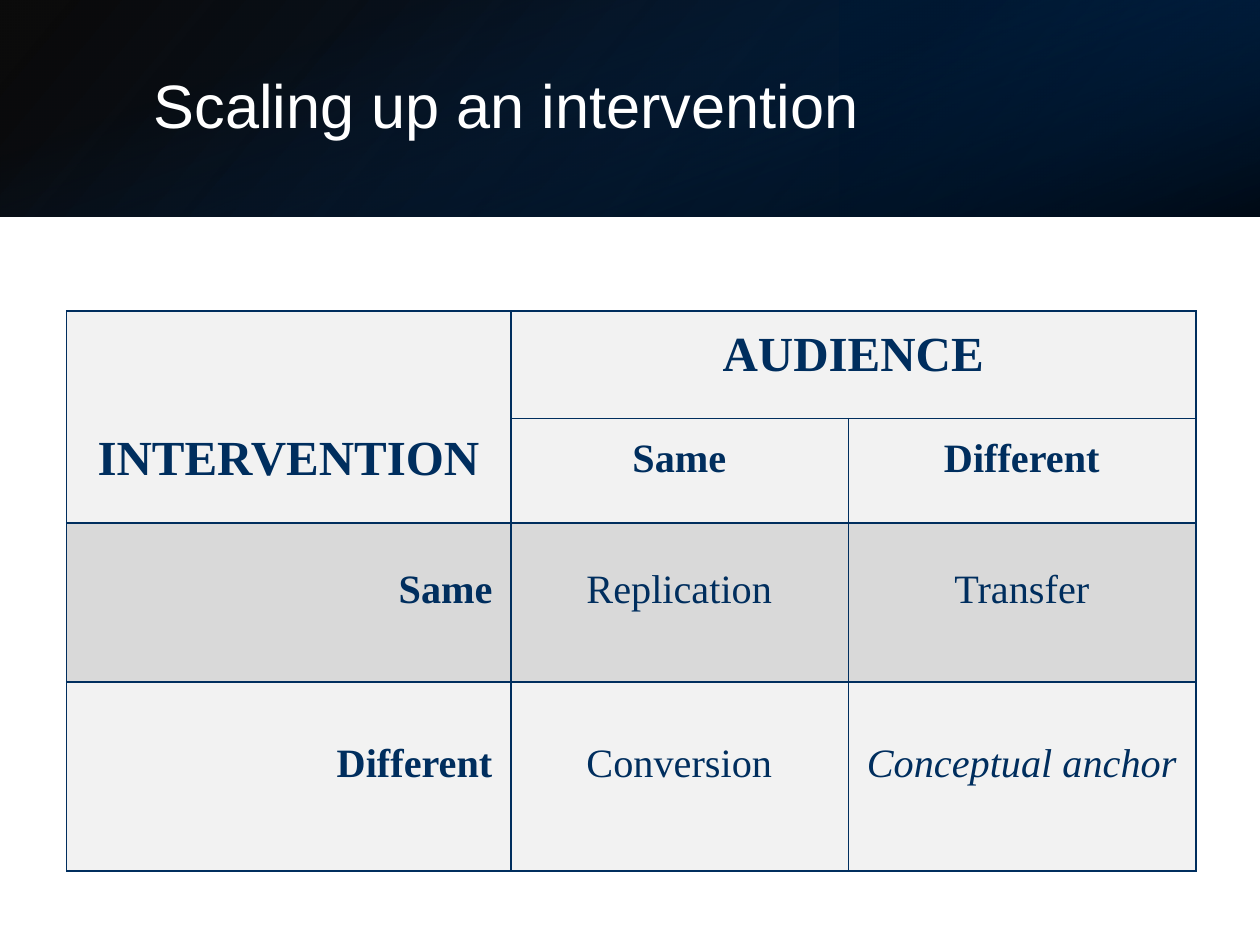
"""Build a slide with a gradient header and an audience by intervention table."""
import pptx
import pptx.dml.color
import pptx.enum.shapes
import pptx.enum.text
import pptx.oxml
import pptx.oxml.ns
import pptx.util
from lxml import etree

Pt = pptx.util.Pt
ALIGN = pptx.enum.text.PP_ALIGN
ANCHOR = pptx.enum.text.MSO_ANCHOR
COLORS = {
    "white": "FFFFFF", "black": "000000", "navy": "002E5E",
    "deep": "002246", "midnight": "00172F", "light": "F2F2F2", "gray": "D9D9D9",
}
TITLE = "Scaling up an intervention"
BAND_HEIGHT = 123.84
BANDS = [
    {"box": (0, 0, 720, BAND_HEIGHT), "rotation": 0, "flip": True, "angle": 140,
     "stops": [(0, "black", 96), (100, "deep", 100)]},
    {"box": (480, 0, 240, BAND_HEIGHT), "rotation": 180, "flip": True, "angle": 320,
     "stops": [(19, "midnight", 68), (100, "navy", 79)]},
    {"box": (360 - BAND_HEIGHT / 2, BAND_HEIGHT / 2 - 360, BAND_HEIGHT, 720),
     "rotation": 90, "flip": False, "angle": 340,
     "stops": [(23, "navy", 0), (99, "black", 74)]},
]
ROWS = [
    ["INTERVENTION", "AUDIENCE", ""],
    ["", "Same", "Different"],
    ["Same", "Replication", "Transfer"],
    ["Different", "Conversion", "Conceptual anchor"],
]
MERGES = [((0, 0), (1, 0)), ((0, 1), (0, 2))]
ROW_FILLS = ["light", "light", "gray", "light"]
TABLE_LEFT, TABLE_TOP = 38, 177.6
COLUMN_WIDTHS = [254, 193, 198.5]
ROW_HEIGHTS = [61.7, 52.6, 91, 108]


def rgb(name):
    return pptx.dml.color.RGBColor.from_string(COLORS[name])


def add_band(slide, depth, band):
    shape = slide.shapes.add_shape(
        pptx.enum.shapes.MSO_SHAPE.RECTANGLE, *(Pt(value) for value in band["box"]))
    shape.shadow.inherit = False
    shape.line.fill.background()
    shape.rotation = band["rotation"]
    if band["flip"]:
        shape.element.spPr.get_or_add_xfrm().set("flipH", "1")
    shape.fill.gradient()
    shape.fill.gradient_angle = 360 - band["angle"]
    stop_elements = shape.element.spPr.iter(pptx.oxml.ns.qn("a:gs"))
    for stop, element, (position, color, opacity) in zip(
            shape.fill.gradient_stops, stop_elements, band["stops"]):
        stop.position = position / 100
        stop.color.rgb = rgb(color)
        alpha = etree.SubElement(element[0], pptx.oxml.ns.qn("a:alpha"))
        alpha.set("val", str(opacity * 1000))
    slide.shapes.element.insert(2 + depth, shape.element)


def add_borders(cell):
    properties = cell._tc.get_or_add_tcPr()
    for side in "LRTB":
        properties.append(pptx.oxml.parse_xml(
            f'<a:ln{side} {pptx.oxml.ns.nsdecls("a")} w="{Pt(1)}"><a:solidFill>'
            f'<a:srgbClr val="{COLORS["navy"]}"/></a:solidFill></a:ln{side}>'))


def format_cell(cell, row, column, text):
    add_borders(cell)
    cell.fill.solid()
    cell.fill.fore_color.rgb = rgb(ROW_FILLS[row])
    cell.margin_left, cell.margin_top = Pt(10), Pt(3)
    cell.margin_right, cell.margin_bottom = Pt(10.5), Pt(21)
    cell.vertical_anchor = ANCHOR.BOTTOM if row == 0 else ANCHOR.MIDDLE
    if not text:
        return
    cell.text = text
    paragraph = cell.text_frame.paragraphs[0]
    paragraph.alignment = ALIGN.RIGHT if row > 1 and column == 0 else ALIGN.CENTER
    paragraph.line_spacing = 1.15
    paragraph.space_before, paragraph.space_after = Pt(5), Pt(10)
    font = paragraph.font
    font.name = "Times New Roman"
    font.size = Pt(28 if row == 0 else 23)
    font.bold = row < 2 or column == 0
    font.italic = text == "Conceptual anchor"
    font.color.rgb = rgb("navy")


def add_matrix(slide):
    frame = slide.shapes.add_table(
        len(ROWS), len(COLUMN_WIDTHS), Pt(TABLE_LEFT), Pt(TABLE_TOP),
        Pt(sum(COLUMN_WIDTHS)), Pt(sum(ROW_HEIGHTS)))
    table = frame.table
    table.first_row = table.horz_banding = False
    for column, width in zip(table.columns, COLUMN_WIDTHS):
        column.width = Pt(width)
    for row, height in zip(table.rows, ROW_HEIGHTS):
        row.height = Pt(height)
    for start, end in MERGES:
        table.cell(*start).merge(table.cell(*end))
    for row, texts in enumerate(ROWS):
        for column, text in enumerate(texts):
            format_cell(table.cell(row, column), row, column, text)


def add_title(slide):
    title = slide.shapes.title
    title.left, title.top, title.width, title.height = Pt(80.6), Pt(27.4), Pt(593), Pt(69)
    title.text_frame.text = TITLE
    title.text_frame.vertical_anchor = ANCHOR.MIDDLE
    paragraph = title.text_frame.paragraphs[0]
    paragraph.alignment = ALIGN.LEFT
    paragraph.line_spacing = 0.9
    paragraph.font.name = "Arial"
    paragraph.font.size = Pt(35)
    paragraph.font.color.rgb = rgb("white")


def main():
    presentation = pptx.Presentation()
    presentation.slide_width, presentation.slide_height = Pt(720), Pt(540)
    slide = presentation.slides.add_slide(presentation.slide_layouts[5])
    slide.background.fill.solid()
    slide.background.fill.fore_color.rgb = rgb("white")
    for depth, band in enumerate(BANDS):
        add_band(slide, depth, band)
    add_title(slide)
    add_matrix(slide)
    presentation.save("out.pptx")


if __name__ == "__main__":
    main()
